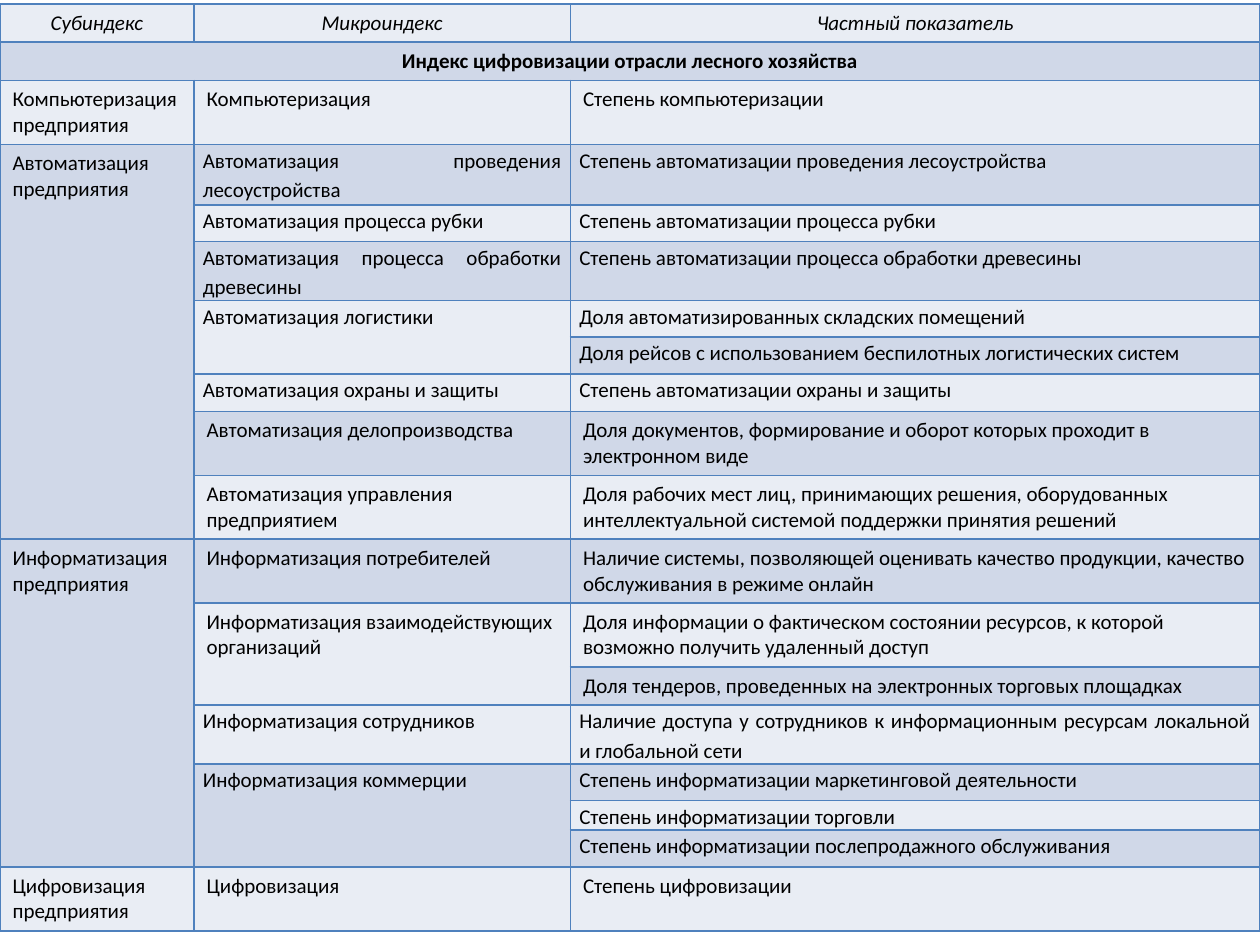
from lxml import etree
from pptx import Presentation
from pptx.dml.color import RGBColor
from pptx.enum.text import PP_ALIGN
from pptx.oxml.ns import qn
from pptx.util import Cm, Pt

CENTER, LEFT, JUSTIFY = PP_ALIGN.CENTER, PP_ALIGN.LEFT, PP_ALIGN.JUSTIFY
COLORS = {"light": "E9EDF4", "dark": "D0D8E8", "line": "4F81BD", "text": "000000"}
COL_WIDTHS = (3.91, 7.59, 13.9)
TIGHT_MARGINS = {"margin_left": Cm(0.18), "margin_right": Cm(0.18),
                 "margin_top": 0, "margin_bottom": 0}

# Row height in cm, tight layout, cell texts; None continues the merged cell
ROWS = [
    (0.74, False, "Субиндекс", "Микроиндекс", "Частный показатель"),
    (0.74, False, "Индекс цифровизации отрасли лесного хозяйства", None, None),
    (1.22, False, "Компьютеризация предприятия", "Компьютеризация",
     "Степень компьютеризации"),
    (1.22, True, "Автоматизация предприятия", "Автоматизация проведения лесоустройства",
     "Степень автоматизации проведения лесоустройства"),
    (0.74, True, None, "Автоматизация процесса рубки",
     "Степень автоматизации процесса рубки"),
    (0.74, True, None, "Автоматизация процесса обработки древесины",
     "Степень автоматизации процесса обработки древесины"),
    (0.74, True, None, "Автоматизация логистики",
     "Доля автоматизированных складских помещений"),
    (0.74, True, None, None,
     "Доля рейсов с использованием беспилотных логистических систем"),
    (0.76, True, None, "Автоматизация охраны и защиты",
     "Степень автоматизации охраны и защиты"),
    (1.22, False, None, "Автоматизация делопроизводства",
     "Доля документов, формирование и оборот которых проходит в электронном виде"),
    (1.22, False, None, "Автоматизация управления предприятием",
     "Доля рабочих мест лиц, принимающих решения, оборудованных "
     "интеллектуальной системой поддержки принятия решений"),
    (1.24, False, "Информатизация предприятия", "Информатизация потребителей",
     "Наличие системы, позволяющей оценивать качество продукции, "
     "качество обслуживания в режиме онлайн"),
    (1.22, False, None, "Информатизация взаимодействующих организаций",
     "Доля информации о фактическом состоянии ресурсов, к которой "
     "возможно получить удаленный доступ"),
    (0.74, False, None, None,
     "Доля тендеров, проведенных на электронных торговых площадках"),
    (1.09, True, None, "Информатизация сотрудников",
     "Наличие доступа у сотрудников к информационным ресурсам "
     "локальной и глобальной сети"),
    (0.74, True, None, "Информатизация коммерции",
     "Степень информатизации маркетинговой деятельности"),
    (0.51, True, None, None, "Степень информатизации торговли"),
    (0.74, True, None, None, "Степень информатизации послепродажного обслуживания"),
    (1.22, False, "Цифровизация предприятия", "Цифровизация", "Степень цифровизации"),
]


def set_attrs(obj, values):
    for name, value in values.items():
        setattr(obj, name, value)


def style_cell(cell, color):
    cell.fill.solid()
    cell.fill.fore_color.rgb = RGBColor.from_string(COLORS[color])
    # Borders come before the fill in the cell properties
    tc_pr = cell._tc.get_or_add_tcPr()
    for i, side in enumerate(("lnL", "lnR", "lnT", "lnB")):
        ln = etree.Element(qn(f"a:{side}"), w=str(Pt(1)))
        fill = etree.SubElement(ln, qn("a:solidFill"))
        etree.SubElement(fill, qn("a:srgbClr"), val=COLORS["line"])
        tc_pr.insert(i, ln)


def write_cell(cell, text, align, tight, font):
    p = cell.text_frame.paragraphs[0]
    p.alignment = align
    if tight:
        p.line_spacing = 1.15
    r = p.add_run()
    r.text = text
    set_attrs(r.font, {"name": "Calibri", "size": Pt(12), **font})
    r.font.color.rgb = RGBColor.from_string(COLORS["text"])


def merge_cells(table):
    # The title row spans all columns; other gaps join the cell above
    table.cell(1, 0).merge(table.cell(1, 2))
    for col in (0, 1):
        start = 2
        for row in range(3, len(ROWS) + 1):
            if row == len(ROWS) or ROWS[row][2 + col] is not None:
                if row - start > 1:
                    table.cell(start, col).merge(table.cell(row - 1, col))
                start = row


def add_index_table(s, left, top, width):
    height = sum(row[0] for row in ROWS)
    table = s.shapes.add_table(len(ROWS), len(COL_WIDTHS), Cm(left), Cm(top),
                               Cm(width), Cm(height)).table
    total = sum(COL_WIDTHS)
    for column, share in zip(table.columns, COL_WIDTHS):
        column.width = Cm(width * share / total)

    for i, (row_height, tight_row, *texts) in enumerate(ROWS):
        table.rows[i].height = Cm(row_height)
        font = {"italic": i == 0, "bold": i == 1}
        for j, text in enumerate(texts):
            cell = table.cell(i, j)
            tight = tight_row and j > 0
            if tight:
                set_attrs(cell, TIGHT_MARGINS)
            style_cell(cell, "dark" if i % 2 else "light")
            if text is not None:
                align = CENTER if i < 2 else JUSTIFY if tight else LEFT
                write_cell(cell, text, align, tight, font)
    merge_cells(table)


def main():
    prs = Presentation()
    prs.slide_width, prs.slide_height = Cm(25.4), Cm(19.05)
    s = prs.slides.add_slide(prs.slide_layouts[6])
    add_index_table(s, 0, 0.08, 25.4)
    prs.save("out.pptx")


if __name__ == "__main__":
    main()
